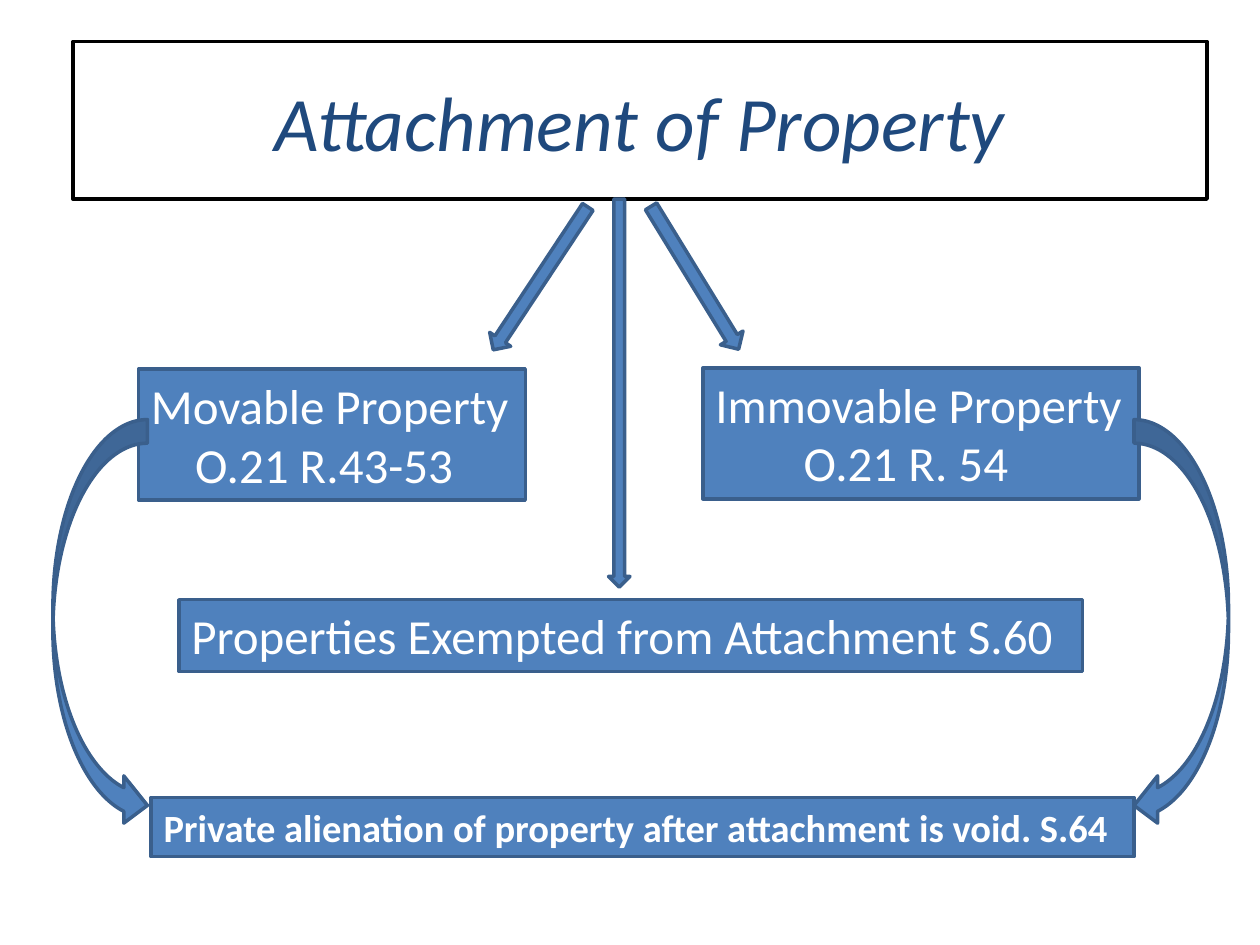
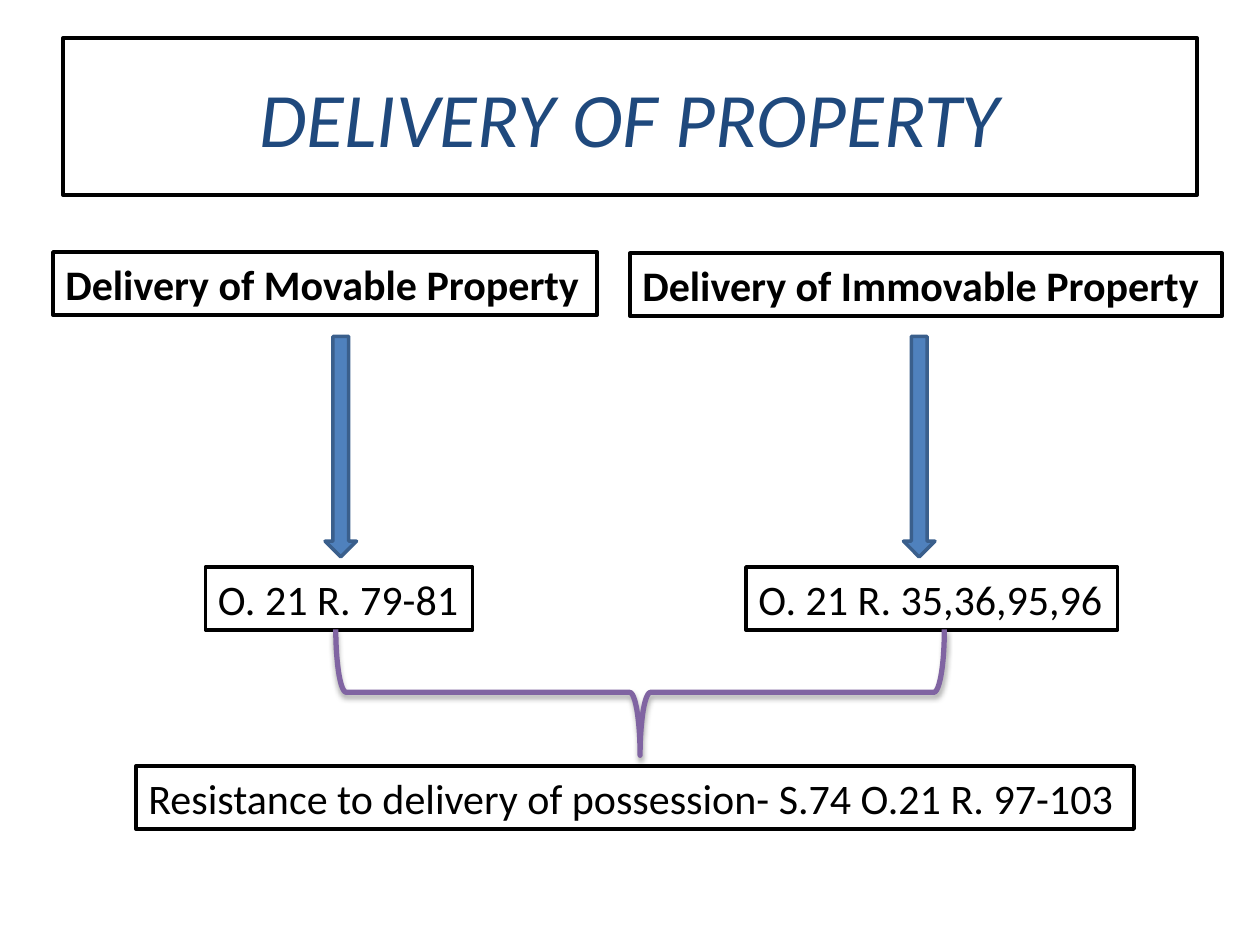
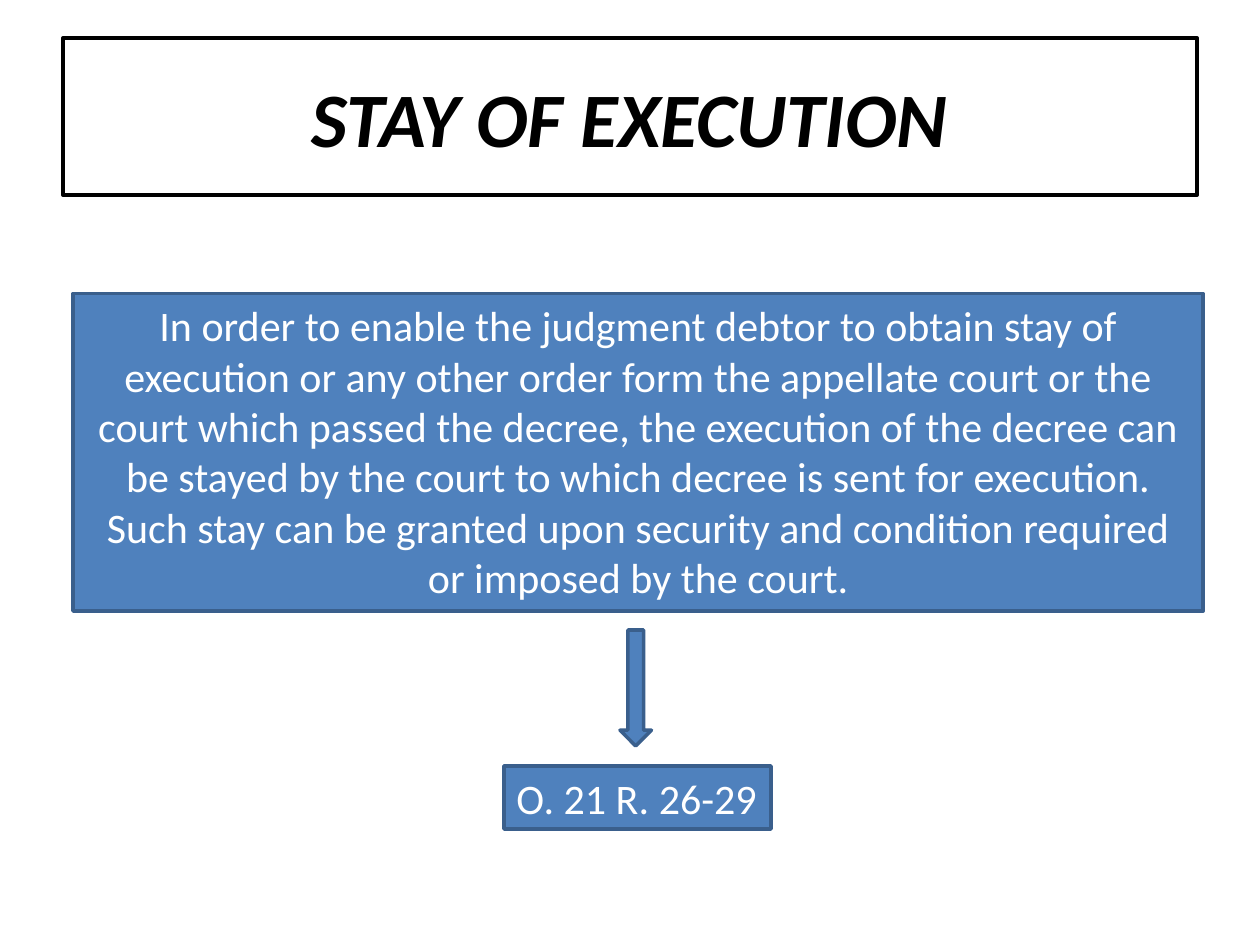
import pptx
import pptx.dml.color
import pptx.enum.shapes
import pptx.enum.text
import pptx.oxml
import pptx.oxml.ns
import pptx.util

Inches = pptx.util.Inches
SHAPES = pptx.enum.shapes.MSO_SHAPE
ALIGN = pptx.enum.text.PP_ALIGN
TITLE_ONLY = 5
COLORS = {
    "white": "FFFFFF",
    "black": "000000",
    "navy": "1F497D",
    "blue": "4F81BD",
    "edge": "3A5F8C",
    "purple": "8064A2",
}
BOX_STYLES = {
    "solid": {"fill": "blue", "line": "edge", "text": "white"},
    "outlined": {"fill": "white", "line": "black", "text": "black"},
}
BRACE_SHADOW = (
    '<a:outerShdw %s blurRad="39370" dist="22860" dir="5400000" rotWithShape="0">'
    '<a:srgbClr val="000000"><a:alpha val="35000"/></a:srgbClr></a:outerShdw>'
    % pptx.oxml.ns.nsdecls("a")
)


def color(name):
    """Return the RGB colour with this name."""
    return pptx.dml.color.RGBColor.from_string(COLORS[name])


def paint(shape, fill, line, width=2):
    """Set the fill and outline of a shape."""
    if fill:
        shape.fill.solid()
        shape.fill.fore_color.rgb = color(fill)
    else:
        shape.fill.background()
    shape.line.color.rgb = color(line)
    shape.line.width = pptx.util.Pt(width)


def place(shape, box):
    """Move and size a shape to a box given in inches."""
    for name, value in zip(("left", "top", "width", "height"), box):
        setattr(shape, name, Inches(value))


def write(paragraph, text, text_color, **formats):
    """Write one formatted run into a paragraph."""
    run = paragraph.add_run()
    run.text = text
    run.font.color.rgb = color(text_color)
    for name, value in {"name": "Calibri", **formats}.items():
        setattr(run.font, name, value)


def add_titled_slide(presentation, text, left=0.5, top=0.3, text_color="navy", bold=False):
    """Add a slide with a framed italic title."""
    slide = presentation.slides.add_slide(presentation.slide_layouts[TITLE_ONLY])
    title = slide.shapes.title
    place(title, (left, top, 9, 1.25))
    paint(title, "white", "black")
    paragraph = title.text_frame.paragraphs[0]
    paragraph.alignment = ALIGN.CENTER
    write(paragraph, text, text_color, size=pptx.util.Pt(44), italic=True, bold=bold)
    return slide


def add_box(slide, box, lines, style, size=24, bold=False, align=ALIGN.LEFT, indent=0):
    """Add a framed text box whose later lines are indented."""
    shape = slide.shapes.add_textbox(*map(Inches, box))
    look = BOX_STYLES[style]
    paint(shape, look["fill"], look["line"])
    frame = shape.text_frame
    frame.word_wrap = True
    frame.auto_size = pptx.enum.text.MSO_AUTO_SIZE.SHAPE_TO_FIT_TEXT
    for index, line in enumerate(lines):
        paragraph = frame.add_paragraph() if index else frame.paragraphs[0]
        paragraph.alignment = align
        if index:
            paragraph._p.get_or_add_pPr().set("marL", str(Inches(indent)))
        write(paragraph, line, look["text"], size=pptx.util.Pt(size), bold=bold)


def add_arrow(slide, box, kind=SHAPES.DOWN_ARROW, rotation=0):
    """Add a blue block arrow."""
    arrow = slide.shapes.add_shape(kind, *map(Inches, box))
    arrow.rotation = rotation
    arrow.shadow.inherit = False
    paint(arrow, "blue", "edge")


def add_brace(slide, box):
    """Add a purple brace that points down and casts a soft shadow."""
    brace = slide.shapes.add_shape(SHAPES.RIGHT_BRACE, *map(Inches, box))
    brace.rotation = 90
    brace.shadow.inherit = False
    paint(brace, None, "purple", 3)
    effects = brace._element.spPr.find(pptx.oxml.ns.qn("a:effectLst"))
    effects.append(pptx.oxml.parse_xml(BRACE_SHADOW))


def build_attachment(presentation):
    """Build the slide on attachment of property."""
    slide = add_titled_slide(presentation, "Attachment of Property", 0.58, 0.33)
    add_box(slide, (1.1, 2.93, 3.07, 1.04), ["Movable Property", "O.21 R.43-53"],
            "solid", 28, indent=0.35)
    add_box(slide, (5.58, 2.92, 3.46, 1.04), ["Immovable Property", "O.21 R. 54"],
            "solid", 28, indent=0.7)
    add_arrow(slide, (4.19, 1.53, 0.2, 1.36), rotation=33.5)
    add_arrow(slide, (5.41, 1.54, 0.21, 1.33), rotation=328.5)
    add_box(slide, (1.42, 4.76, 7.17, 0.57), ["Properties Exempted from Attachment S.60"],
            "solid", 28)
    add_arrow(slide, (4.83, 1.58, 0.17, 3.08))
    for left, kind in ((0.42, SHAPES.CURVED_RIGHT_ARROW), (9, SHAPES.CURVED_LEFT_ARROW)):
        add_arrow(slide, (left, 3.33, 0.75, 3.25), kind)
    add_box(slide, (1.2, 6.33, 7.8, 0.47),
            ["Private alienation of property after attachment is void. S.64"],
            "solid", 22, bold=True)


def build_delivery(presentation):
    """Build the slide on delivery of property."""
    slide = add_titled_slide(presentation, "DELIVERY OF PROPERTY")
    boxes = (
        ((0.42, 2, 4.32, 0.5), "Delivery of Movable Property", True),
        ((5, 2.01, 4.7, 0.5), "Delivery of Immovable Property", True),
        ((1.63, 4.5, 2.12, 0.5), "O. 21 R. 79-81", False),
        ((5.92, 4.5, 2.95, 0.5), "O. 21 R. 35,36,95,96", False),
        ((1.08, 6.08, 7.92, 0.5),
         "Resistance to delivery of possession- S.74 O.21 R. 97-103", False),
    )
    for box, text, bold in boxes:
        add_box(slide, box, [text], "outlined", bold=bold)
    for left in (2.58, 7.17):
        add_arrow(slide, (left, 2.67, 0.25, 1.75))
    add_brace(slide, (4.58, 3.08, 1, 4.83))


def build_stay(presentation):
    """Build the slide on stay of execution."""
    slide = add_titled_slide(presentation, "STAY OF EXECUTION", text_color="black", bold=True)
    explanation = (
        "In order to enable the judgment debtor to obtain stay of execution or any other "
        "order form the appellate court or the court which passed the decree, the execution "
        "of the decree can be stayed by the court to which decree is sent for execution. "
        "Such stay can be granted upon security and condition required or imposed by the court."
    )
    add_box(slide, (0.58, 2.33, 8.97, 2.52), [explanation], "solid", align=ALIGN.CENTER)
    add_box(slide, (4, 6.08, 2.12, 0.5), ["O. 21 R. 26-29"], "solid")
    add_arrow(slide, (4.92, 5, 0.25, 0.92))


def main():
    """Build and save the presentation."""
    presentation = pptx.Presentation()
    presentation.slide_width = Inches(10)
    presentation.slide_height = Inches(7.5)
    for build in (build_attachment, build_delivery, build_stay):
        build(presentation)
    presentation.save("out.pptx")


if __name__ == "__main__":
    main()
